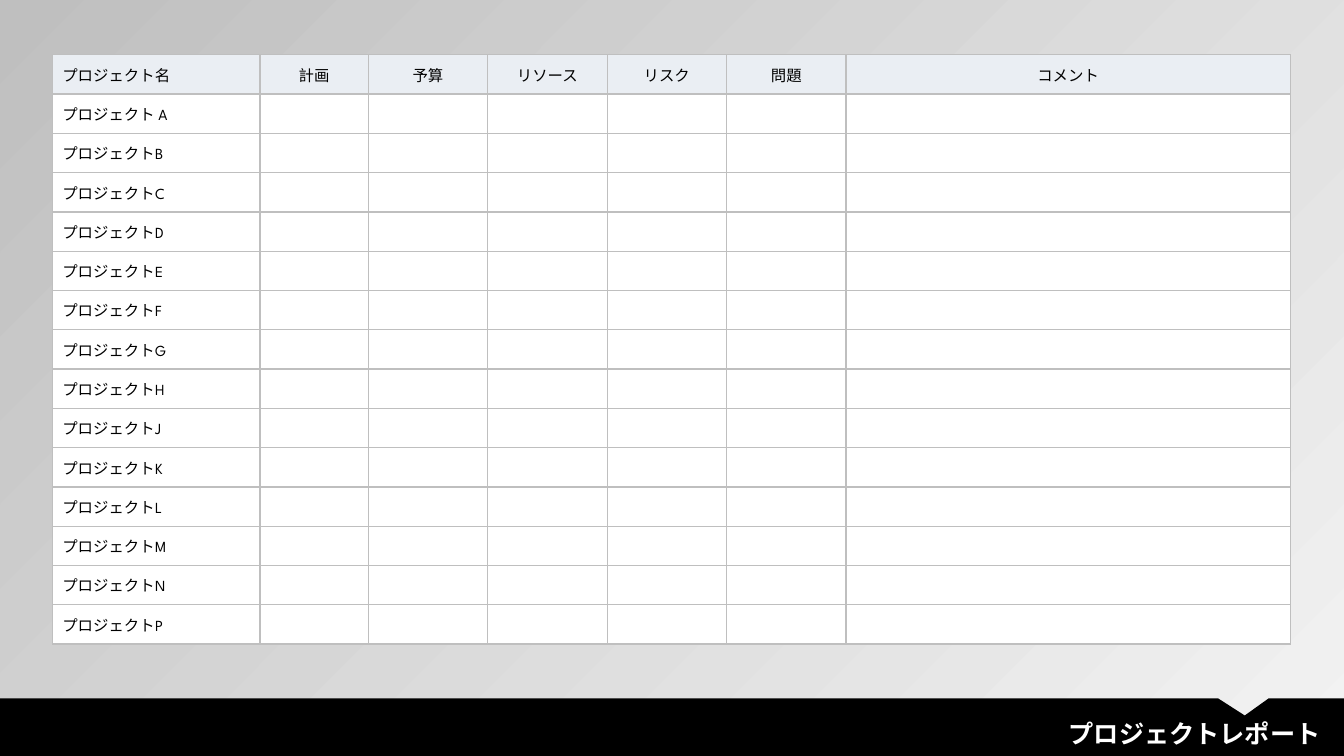
from pptx import Presentation
from pptx.dml.color import RGBColor as Rgb
from pptx.enum.text import MSO_ANCHOR as Anchor, MSO_AUTO_SIZE as AutoSize, PP_ALIGN as Align
from pptx.oxml import parse_xml
from pptx.oxml.ns import nsdecls
from pptx.util import Cm, Pt

COLORS = {
    "black": "000000",
    "white": "FFFFFF",
    "header": "EAEEF3",
    "border": "BFBFBF",
    "light": "F2F2F2",
    "gray": "BFBFBF",
}
WIDTH, HEIGHT = 33.87, 19.05
HEADINGS = ["プロジェクト名", "計画", "予算", "リソース", "リスク", "問題", "コメント"]
PROJECTS = ["プロジェクト A"] + [f"プロジェクト{letter}" for letter in "BCDEFGHJKLMNP"]
COLUMN_WIDTHS = [5.23, 2.73] + [3.01] * 4 + [11.2]
ROW_HEIGHT = 0.99


def color(name):
    return Rgb.from_string(COLORS[name])


def assign(target, values):
    for name, value in values.items():
        setattr(target, name, value)


class SlideBuilder:
    font = "League Spartan"

    def __init__(self, page):
        self.page = page

    def background(self, start, end, angle):
        fill = self.page.background.fill
        fill.gradient()
        fill.gradient_angle = angle
        for stop, name in zip(fill.gradient_stops, (start, end)):
            stop.color.rgb = color(name)

    def add_span(self, para, text, size, name, align, bold=False):
        para.alignment = align
        span = para.add_run()
        span.text = text
        assign(span.font, {"name": self.font, "size": Pt(size), "bold": bold})
        span.font.color.rgb = color(name)

    def cell_borders(self, cell):
        properties = cell._tc.get_or_add_tcPr()
        for index, side in enumerate(("lnL", "lnR", "lnT", "lnB")):
            properties.insert(index, parse_xml(
                f'<a:{side} {nsdecls("a")} w="{Pt(1)}"><a:solidFill>'
                f'<a:srgbClr val="{COLORS["border"]}"/></a:solidFill></a:{side}>'))

    def table(self, left, top, widths, row_height, rows):
        frame = self.page.shapes.add_table(
            len(rows), len(widths), Cm(left), Cm(top),
            Cm(sum(widths)), Cm(row_height * len(rows)))
        table = frame.table
        for column, width in zip(table.columns, widths):
            column.width = Cm(width)
        for row_index, texts in enumerate(rows):
            table.rows[row_index].height = Cm(row_height)
            for column_index in range(len(widths)):
                cell = table.cell(row_index, column_index)
                assign(cell, {
                    "margin_left": Cm(0.25), "margin_right": Cm(0.25),
                    "margin_top": 0, "margin_bottom": 0,
                    "vertical_anchor": Anchor.MIDDLE,
                })
                cell.fill.solid()
                cell.fill.fore_color.rgb = color("white" if row_index else "header")
                self.cell_borders(cell)
                if column_index < len(texts):
                    align = Align.CENTER if column_index else Align.LEFT
                    self.add_span(cell.text_frame.paragraphs[0], texts[column_index],
                                  11, "black", align)

    def outline(self, points, name):
        start, *others = [(Cm(x), Cm(y)) for x, y in points]
        builder = self.page.shapes.build_freeform(*start)
        builder.add_line_segments(others, close=True)
        shape = builder.convert_to_shape()
        shape.shadow.inherit = False
        shape.fill.solid()
        shape.fill.fore_color.rgb = color(name)
        shape.line.fill.background()

    def text(self, left, top, width, height, text, size, name, align, bold):
        box = self.page.shapes.add_textbox(Cm(left), Cm(top), Cm(width), Cm(height))
        assign(box.text_frame, {"word_wrap": True, "auto_size": AutoSize.SHAPE_TO_FIT_TEXT})
        self.add_span(box.text_frame.paragraphs[0], text, size, name, align, bold)


def main():
    deck = Presentation()
    assign(deck, {"slide_width": Cm(WIDTH), "slide_height": Cm(HEIGHT)})
    slide = SlideBuilder(deck.slides.add_slide(deck.slide_layouts[6]))
    slide.background("light", "gray", 135)
    slide.table(1.32, 1.38, COLUMN_WIDTHS, ROW_HEIGHT,
                [HEADINGS] + [[project] for project in PROJECTS])
    band_top = 17.6
    slide.outline([(0, band_top), (30.7, band_top), (31.37, 18.03), (31.97, band_top),
                   (WIDTH, band_top), (WIDTH, HEIGHT), (0, HEIGHT)], "black")
    slide.text(10.52, 17.98, 23.01, 1.02, "プロジェクトレポート", 18, "white", Align.RIGHT, True)
    deck.save("out.pptx")


if __name__ == "__main__":
    main()
